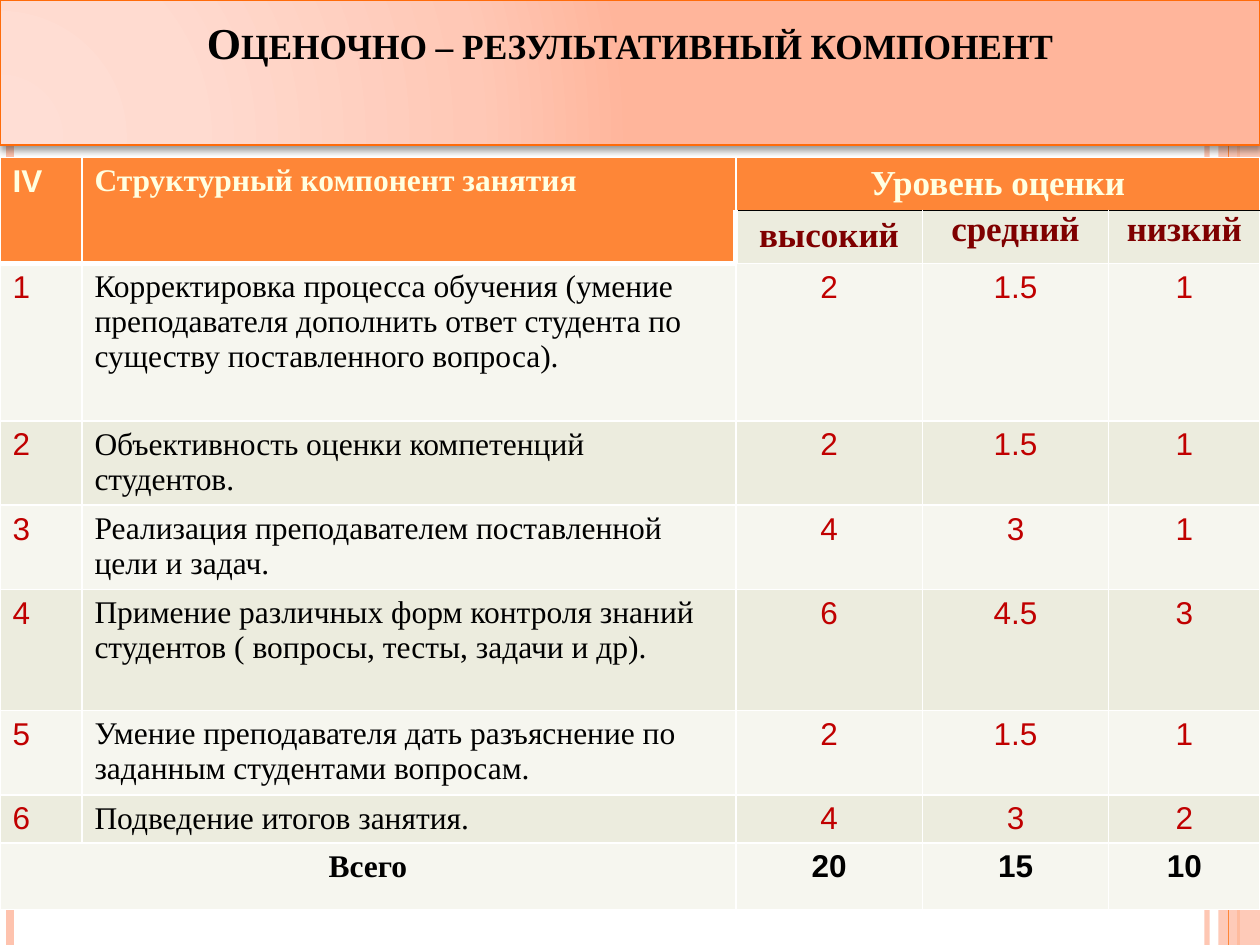
import pptx
import pptx.util
import pptx.dml.color
import pptx.enum.shapes
import pptx.enum.text
import pptx.oxml
import pptx.oxml.ns
from dataclasses import dataclass

Inches, Pt = pptx.util.Inches, pptx.util.Pt
Align = pptx.enum.text.PP_ALIGN
NS = pptx.oxml.ns.nsdecls("a")


@dataclass(frozen=True)
class Theme:
    serif: str = "Times New Roman"
    sans: str = "Arial"
    head: str = "FE8637"
    pale: str = "FEC3AE"
    cream: str = "FFFFE1"
    band: str = "ECECDE"
    light: str = "F6F6EF"
    white: str = "FFFFFF"
    black: str = "000000"
    red: str = "C00000"
    dark: str = "7F0000"
    edge: str = "FF6B0A"
    glow: tuple = ((0, "FFDED5"), (30, "FFDBD0"), (75, "FFC8B6"), (100, "FFB59B"))
    title: float = 25.2
    level: float = 20
    body: float = 18


T = Theme()

COLS = [0.65, 5.19, 1.48, 1.48, 1.2]
ROWS = [0.42, 0.42, 1.25, 0.67, 0.67, 0.96, 0.67, 0.38, 0.53]
LEVELS = ["высокий", "средний", "низкий"]
ITEMS = [
    ("Корректировка процесса обучения (умение преподавателя дополнить ответ "
     "студента по существу поставленного вопроса).", "2", "1.5", "1"),
    ("Объективность оценки компетенций студентов.", "2", "1.5", "1"),
    ("Реализация преподавателем поставленной цели и задач.", "4", "3", "1"),
    ("Примение различных форм контроля знаний студентов ( вопросы, тесты, "
     "задачи и др).", "6", "4.5", "3"),
    ("Умение преподавателя дать разъяснение по заданным студентами вопросам.",
     "2", "1.5", "1"),
    ("Подведение итогов занятия.", "4", "3", "2"),
]
TOTAL = ["20", "15", "10"]


def rgb(code):
    return pptx.dml.color.RGBColor.from_string(code)


def fade(fill, pct):
    """Make a solid fill partly transparent."""
    node = fill._xPr.find(".//" + pptx.oxml.ns.qn("a:srgbClr"))
    node.append(pptx.oxml.parse_xml(f'<a:alpha {NS} val="{pct * 1000}"/>'))


def style(frame, size, font, color, bold=False, align=Align.LEFT):
    para = frame.paragraphs[0]
    para.alignment = align
    for run in para.runs:
        run.font.size, run.font.name, run.font.bold = Pt(size), font, bold
        run.font.color.rgb = rgb(color)


def add_rails(slide, x, y, w, h):
    """Vertical stripes at both sides of the page."""
    def rail(dx, color, width, alpha=None):
        line = slide.shapes.add_connector(
            pptx.enum.shapes.MSO_CONNECTOR.STRAIGHT,
            Inches(x + dx), Inches(y), Inches(x + dx), Inches(y + h))
        line.line.color.rgb = rgb(color)
        line.line.width = Pt(width)
        if alpha:
            fade(line.line.fill, alpha)
        line._element.spPr.append(pptx.oxml.parse_xml(f"<a:effectLst {NS}/>"))

    rail(w - 0.42, T.pale, 3, 93)
    rail(0.08, T.pale, 4.5)
    rail(w - 0.17, T.head, 1.5)
    strip = slide.shapes.add_shape(
        pptx.enum.shapes.MSO_SHAPE.RECTANGLE,
        Inches(x + w - 0.33), Inches(y), Inches(0.33), Inches(h))
    strip.shadow.inherit = False
    strip.fill.solid()
    strip.fill.fore_color.rgb = rgb(T.pale)
    fade(strip.fill, 87)
    strip.line.fill.background()
    rail(w - 0.25, T.head, 0.75)


def add_title(slide, x, y, w, h):
    title = slide.shapes.title
    title.left, title.top = Inches(x), Inches(y)
    title.width, title.height = Inches(w), Inches(h)

    # Bring the band in front of the rails
    tree = title._element.getparent()
    tree.append(title._element)

    # Radial gradient, outline and soft shadow
    props = title._element.spPr
    stops = "".join(f'<a:gs pos="{pos * 1000}"><a:srgbClr val="{code}"/></a:gs>'
                    for pos, code in T.glow)
    props.append(pptx.oxml.parse_xml(
        f'<a:gradFill {NS}><a:gsLst>{stops}</a:gsLst><a:path path="circle">'
        '<a:fillToRect l="5000" t="100000" r="120000" b="10000"/>'
        '</a:path></a:gradFill>'))
    title.line.color.rgb = rgb(T.edge)
    title.line.width = Pt(1)
    props.append(pptx.oxml.parse_xml(
        f'<a:effectLst {NS}><a:outerShdw blurRad="{Pt(4)}" dist="{Pt(2)}" '
        f'dir="5400000" rotWithShape="0"><a:srgbClr val="{T.black}">'
        '<a:alpha val="40000"/></a:srgbClr></a:outerShdw></a:effectLst>'))

    frame = title.text_frame
    frame.text = "Оценочно – результативный компонент"
    frame.word_wrap = True
    frame.auto_size = pptx.enum.text.MSO_AUTO_SIZE.NONE
    frame.vertical_anchor = pptx.enum.text.MSO_ANCHOR.BOTTOM
    frame.margin_bottom = Inches(0.61)
    style(frame, T.title, T.serif, T.black, True, Align.CENTER)
    frame.paragraphs[0].runs[0].font._element.set("cap", "small")


def paint(cell, fill, **edges):
    """Fill a cell and rule its four sides; white hairlines unless named."""
    cell.fill.solid()
    cell.fill.fore_color.rgb = rgb(fill)
    props = cell._tc.get_or_add_tcPr()
    for i, side in enumerate("LRTB"):
        color, width = edges.get(side, (T.white, 1))
        props.insert(i, pptx.oxml.parse_xml(
            f'<a:ln{side} {NS} w="{Pt(width)}"><a:solidFill>'
            f'<a:srgbClr val="{color}"/></a:solidFill></a:ln{side}>'))


def add_table(slide, x, y, w):
    grid = slide.shapes.add_table(
        len(ROWS), len(COLS), Inches(x), Inches(y),
        Inches(w), Inches(sum(ROWS))).table
    for col, width in zip(grid.columns, COLS):
        col.width = Inches(width)
    for row, height in zip(grid.rows, ROWS):
        row.height = Inches(height)
    last = len(ROWS) - 1
    thick, rule = (T.white, 3), (T.black, 1)

    def put(r, c, text, *look):
        frame = grid.cell(r, c).text_frame
        frame.text = text
        style(frame, *look)

    # Fills and borders
    for r in range(len(ROWS)):
        for c in range(len(COLS)):
            cell = grid.cell(r, c)
            if r < 2 and c < 2:
                paint(cell, T.head, B=thick)
            elif r == 0:
                paint(cell, T.head, B=rule)
            elif r == 1:
                paint(cell, T.band, T=rule, L=thick if c == 2 else (T.white, 1))
            else:
                top = {"T": thick} if r == 2 and c < 2 else {}
                paint(cell, T.band if r % 2 else T.light, **top)

    # Merged cells
    for start, end in [((0, 0), (1, 0)), ((0, 1), (1, 1)),
                       ((0, 2), (0, 4)), ((last, 0), (last, 1))]:
        grid.cell(*start).merge(grid.cell(*end))

    # Header
    put(0, 0, "IV", T.body, T.sans, T.cream, True)
    put(0, 1, "Структурный компонент занятия", T.body, T.serif, T.cream, True)
    put(0, 2, "Уровень оценки", T.level, T.serif, T.cream, True, Align.CENTER)
    for c, name in enumerate(LEVELS, 2):
        put(1, c, name, T.level, T.serif, T.dark, True, Align.CENTER)
        if c > 2:
            cell = grid.cell(1, c)
            cell.margin_left = cell.margin_right = Inches(0.07)
            cell.margin_top = cell.margin_bottom = 0

    # Criteria and their marks
    for n, (text, *marks) in enumerate(ITEMS, 1):
        put(n + 1, 0, str(n), T.body, T.sans, T.red)
        put(n + 1, 1, text, T.body, T.serif, T.black)
        for c, mark in enumerate(marks, 2):
            put(n + 1, c, mark, T.body, T.sans, T.red, False, Align.CENTER)

    # Totals
    put(last, 0, "Всего", T.body, T.serif, T.black, True, Align.CENTER)
    for c, mark in enumerate(TOTAL, 2):
        put(last, c, mark, T.body, T.sans, T.black, True, Align.CENTER)


def main():
    deck = pptx.Presentation()
    deck.slide_width, deck.slide_height = Inches(10), Inches(7.5)
    slide = deck.slides.add_slide(deck.slide_layouts[5])
    add_rails(slide, 0, 0, 10, 7.5)
    add_title(slide, 0, 0, 10, 1.15)
    add_table(slide, 0, 1.25, 10)
    deck.save("out.pptx")


if __name__ == "__main__":
    main()
